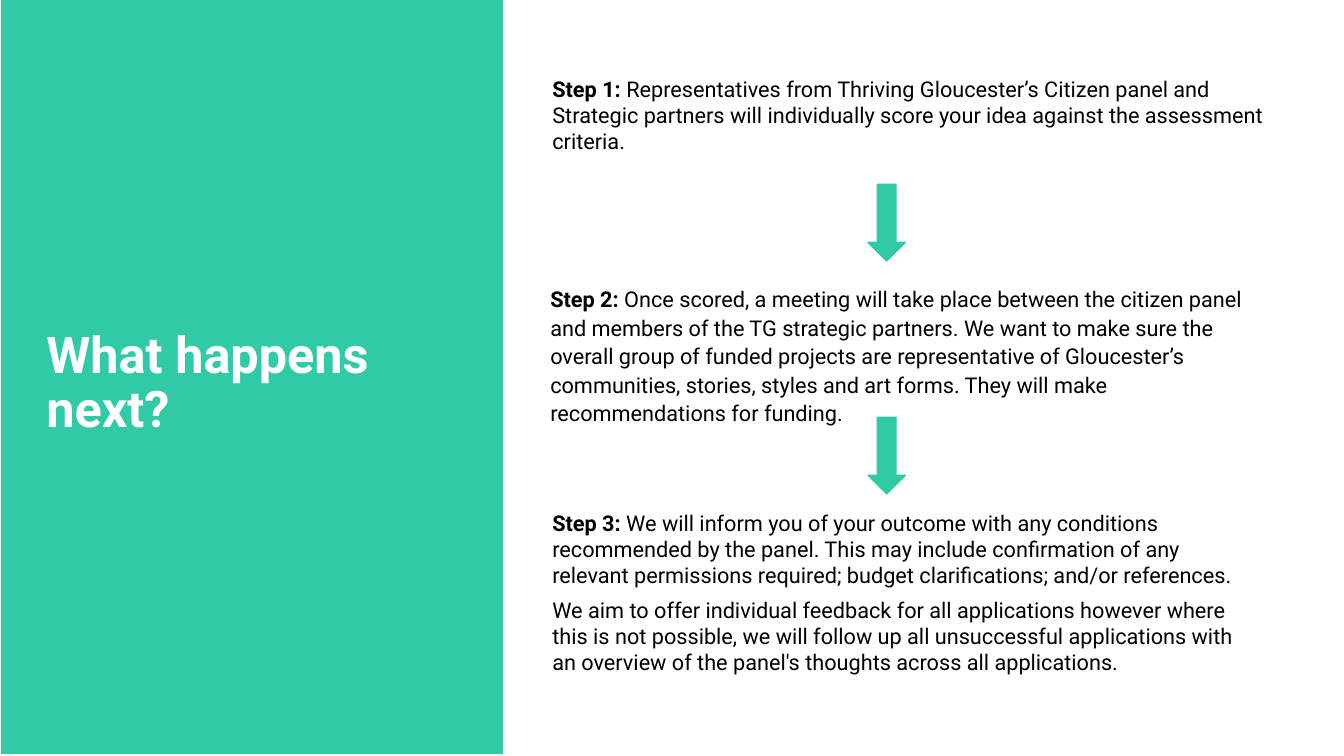
from pptx import Presentation
from pptx.dml.color import RGBColor
from pptx.enum.shapes import MSO_SHAPE as SHAPE
from pptx.enum.text import MSO_ANCHOR as ANCHOR, PP_ALIGN as ALIGN
from pptx.util import Inches, Pt

GREEN, WHITE, BLACK = "30CAA7", "FFFFFF", "000000"


def rgb(color):
    return RGBColor.from_string(color)


class Deck:
    """Holds the font and the current slide."""

    font = "Roboto"

    def __init__(self):
        self.prs = Presentation()
        self.prs.slide_width, self.prs.slide_height = Inches(13.33), Inches(7.5)
        self.s = self.prs.slides.add_slide(self.prs.slide_layouts[5])

    def style(self, p, size, color, bold=None):
        p.alignment = ALIGN.LEFT
        p.font.name, p.font.size = self.font, Pt(size)
        p.font.color.rgb = rgb(color)
        p.font.bold = bold

    def shape(self, kind, x, y, w, h, line):
        sp = self.s.shapes.add_shape(kind, Inches(x), Inches(y), Inches(w), Inches(h))
        sp.shadow.inherit = False
        sp.fill.solid()
        sp.fill.fore_color.rgb = rgb(GREEN)
        sp.line.color.rgb = rgb(line)
        sp.line.width = Pt(1)

    def title(self, text, x, y, w, h):
        """Fill the title placeholder and bring it in front of the shapes so far."""
        sp = self.s.shapes.title
        sp.left, sp.top, sp.width, sp.height = Inches(x), Inches(y), Inches(w), Inches(h)
        tf = sp.text_frame
        tf.text, tf.word_wrap, tf.vertical_anchor = text, True, ANCHOR.BOTTOM
        p = tf.paragraphs[0]
        self.style(p, 36, WHITE, True)
        p.line_spacing = 0.9
        sp._element.getparent().append(sp._element)

    def step(self, label, texts, x, y, w, h, spacing=1.0):
        """Add a step whose first paragraph opens with a bold label."""
        tf = self.s.shapes.add_textbox(Inches(x), Inches(y), Inches(w), Inches(h)).text_frame
        tf.word_wrap = True
        for i, text in enumerate(texts):
            p = tf.add_paragraph() if i else tf.paragraphs[0]
            self.style(p, 15.5, BLACK)
            p.line_spacing, p.space_after = spacing, Pt(6)
            if i == 0:
                r = p.add_run()
                r.text, r.font.bold = f"{label}: ", True
            p.add_run().text = text


def main():
    deck = Deck()
    deck.shape(SHAPE.RECTANGLE, 0, -0.01, 5, 7.5, WHITE)
    deck.title("What happens next?", 0.36, 3.3, 4.63, 1.1)
    deck.step("Step 1", [
        "Representatives from Thriving Gloucester’s Citizen panel and Strategic partners "
        "will individually score your idea against the assessment criteria.",
    ], 5.38, 0.7, 7.31, 0.88)
    deck.step("Step 2", [
        "Once scored, a meeting will take place between the citizen panel and members of "
        "the TG strategic partners. We want to make sure the overall group of funded "
        "projects are representative of Gloucester’s communities, stories, styles and art "
        "forms. They will make recommendations for funding.",
    ], 5.36, 2.76, 7.13, 1.41, spacing=1.1)
    deck.step("Step 3", [
        "We will inform you of your outcome with any conditions recommended by the panel. "
        "This may include confirmation of any relevant permissions required; budget "
        "clarifications; and/or references.",
        "We aim to offer individual feedback for all applications however where this is "
        "not possible, we will follow up all unsuccessful applications with an overview "
        "of the panel's thoughts across all applications.",
    ], 5.38, 5.01, 7.13, 2.01)
    for y in (1.83, 4.14):
        deck.shape(SHAPE.DOWN_ARROW, 8.61, y, 0.37, 0.76, GREEN)
    deck.prs.save("out.pptx")


if __name__ == "__main__":
    main()
